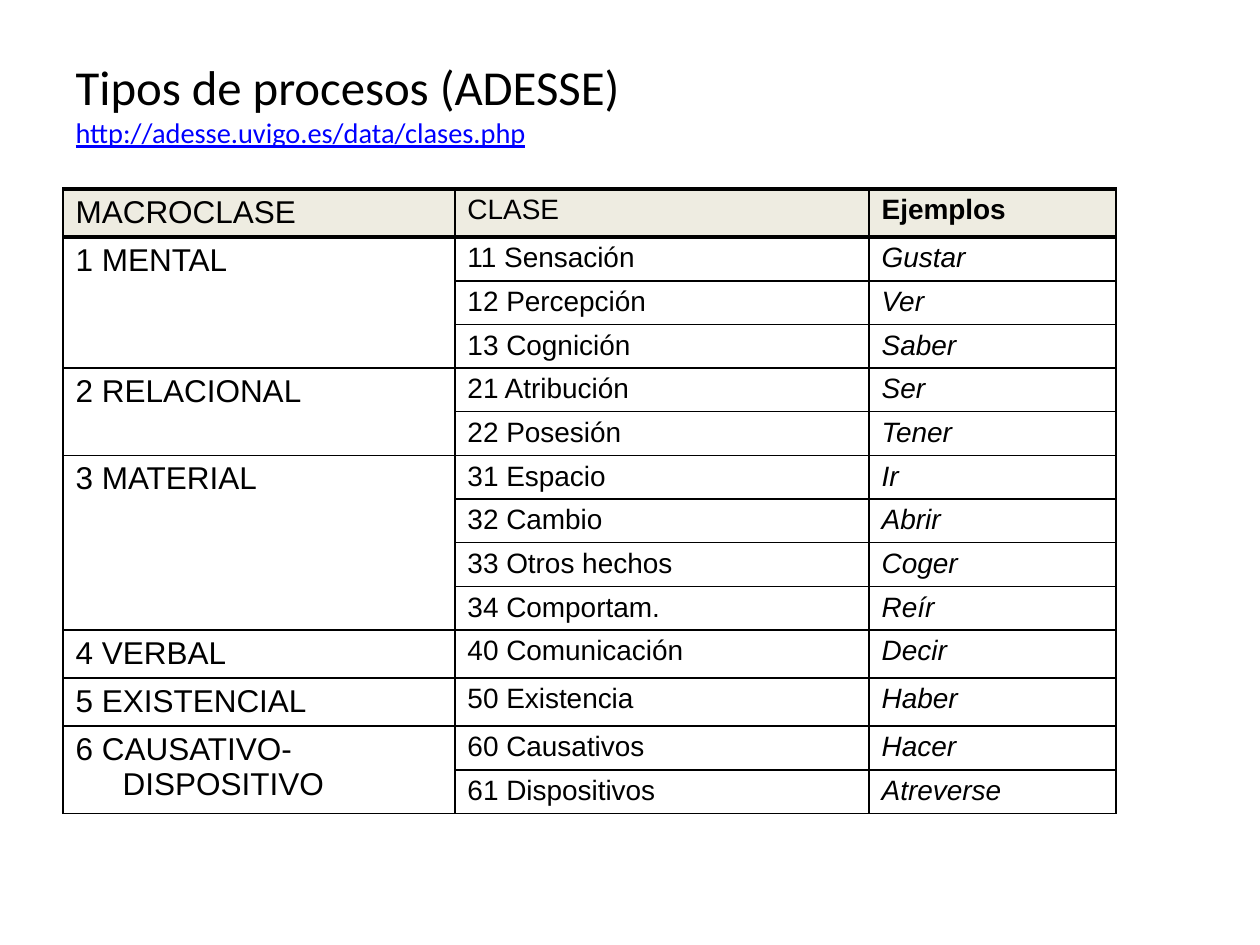
from lxml.etree import SubElement
from pptx import Presentation
from pptx.dml.color import RGBColor as Rgb
from pptx.enum.text import MSO_ANCHOR as Anchor, MSO_AUTO_SIZE as Auto, PP_ALIGN as Align
from pptx.oxml import parse_xml as parse
from pptx.oxml.ns import nsdecls, qn
from pptx.util import Cm, Pt

BLACK, BLUE, SAND = "000000", "0000FF", "EEECE1"
HEAD = ["MACROCLASE", "CLASE", "Ejemplos"]
GROUPS = [
    ("1 MENTAL", [("11 Sensación", "Gustar"), ("12 Percepción", "Ver"),
                  ("13 Cognición", "Saber")]),
    ("2 RELACIONAL", [("21 Atribución", "Ser"), ("22 Posesión", "Tener")]),
    ("3 MATERIAL", [("31 Espacio", "Ir"), ("32 Cambio", "Abrir"),
                    ("33 Otros hechos", "Coger"), ("34 Comportam.", "Reír")]),
    ("4 VERBAL", [("40 Comunicación", "Decir")]),
    ("5 EXISTENCIAL", [("50 Existencia", "Haber")]),
    ("6 CAUSATIVO-DISPOSITIVO", [("60 Causativos", "Hacer"),
                                 ("61 Dispositivos", "Atreverse")]),
]


def color(code):
    return Rgb.from_string(code)


class Deck:
    """Holds the style and the current slide, and draws each kind of element."""

    def __init__(self):
        self.show = Presentation()
        self.show.slide_width, self.show.slide_height = Cm(25.4), Cm(19.05)
        self.slide = self.show.slides.add_slide(self.show.slide_layouts[5])
        self.sizes = (18, 16, 16)

    def font(self, para, name, size, code=BLACK, **style):
        font = para.font
        font.name, font.size, font.color.rgb = name, Pt(size), color(code)
        for key, value in style.items():
            setattr(font, key, value)

    def title(self, text, link):
        shape = self.slide.shapes.title
        shape.left, shape.top = Cm(1.27), Cm(0.76)
        shape.width, shape.height = Cm(22.86), Cm(3.18)
        frame = shape.text_frame
        frame.auto_size, frame.vertical_anchor = Auto.NONE, Anchor.TOP
        frame.margin_top = Cm(0.38)
        frame.text = f"{text}\n{link}"
        first, second = frame.paragraphs
        self.font(first, "Calibri", 27.9)
        self.font(second, "Calibri", 16.2, BLUE, underline=True)
        for para in frame.paragraphs:
            para.alignment = Align.LEFT

    def border(self, cell, row):
        props = cell._tc.get_or_add_tcPr()
        thick = {"T": row < 2, "B": row == 0}
        for spot, side in enumerate("LRTB"):
            width = Pt(2.25 if thick.get(side) else 1)
            line = parse(f'<a:ln{side} {nsdecls("a")} w="{width}"/>')
            fill = SubElement(line, qn("a:solidFill"))
            SubElement(fill, qn("a:srgbClr"), val=BLACK)
            props.insert(spot, line)

    def cell(self, grid, row, col, text):
        cell = grid.cell(row, col)
        cell.margin_top = cell.margin_bottom = Cm(0.11)
        if row:
            cell.fill.background()
        else:
            cell.fill.solid()
            cell.fill.fore_color.rgb = color(SAND)
        self.border(cell, row)
        cell.text = text
        para = cell.text_frame.paragraphs[0]
        last = col == 2
        self.font(para, "Arial", self.sizes[col],
                  bold=last and row == 0, italic=last and row > 0)
        props = para._p.get_or_add_pPr()
        props.set("marL", str(Cm(0.95)))
        props.set("indent", str(-Cm(0.95)))

    def table(self, head, groups):
        rows, spans = [head], []
        for name, items in groups:
            spans.append((len(rows), len(items)))
            for spot, (kind, verb) in enumerate(items):
                rows.append(["" if spot else name, kind, verb])
        grid = self.slide.shapes.add_table(
            len(rows), len(head), Cm(1.27), Cm(3.81), Cm(21.23), Cm(12.6)).table
        grid.first_row = grid.horz_banding = False
        for col, width in zip(grid.columns, (7.9, 8.35, 4.98)):
            col.width = Cm(width)
        tall = {0} | {start for start, size in spans if size == 1}
        for row, texts in enumerate(rows):
            grid.rows[row].height = Cm(0.97 if row in tall else 0.88)
            for col, text in enumerate(texts):
                self.cell(grid, row, col, text)
        for start, size in spans:
            if size > 1:
                grid.cell(start, 0).merge(grid.cell(start + size - 1, 0))


def main():
    deck = Deck()
    deck.title("Tipos de procesos (ADESSE)", "http://adesse.uvigo.es/data/clases.php")
    deck.table(HEAD, GROUPS)
    deck.show.save("out.pptx")


if __name__ == "__main__":
    main()
